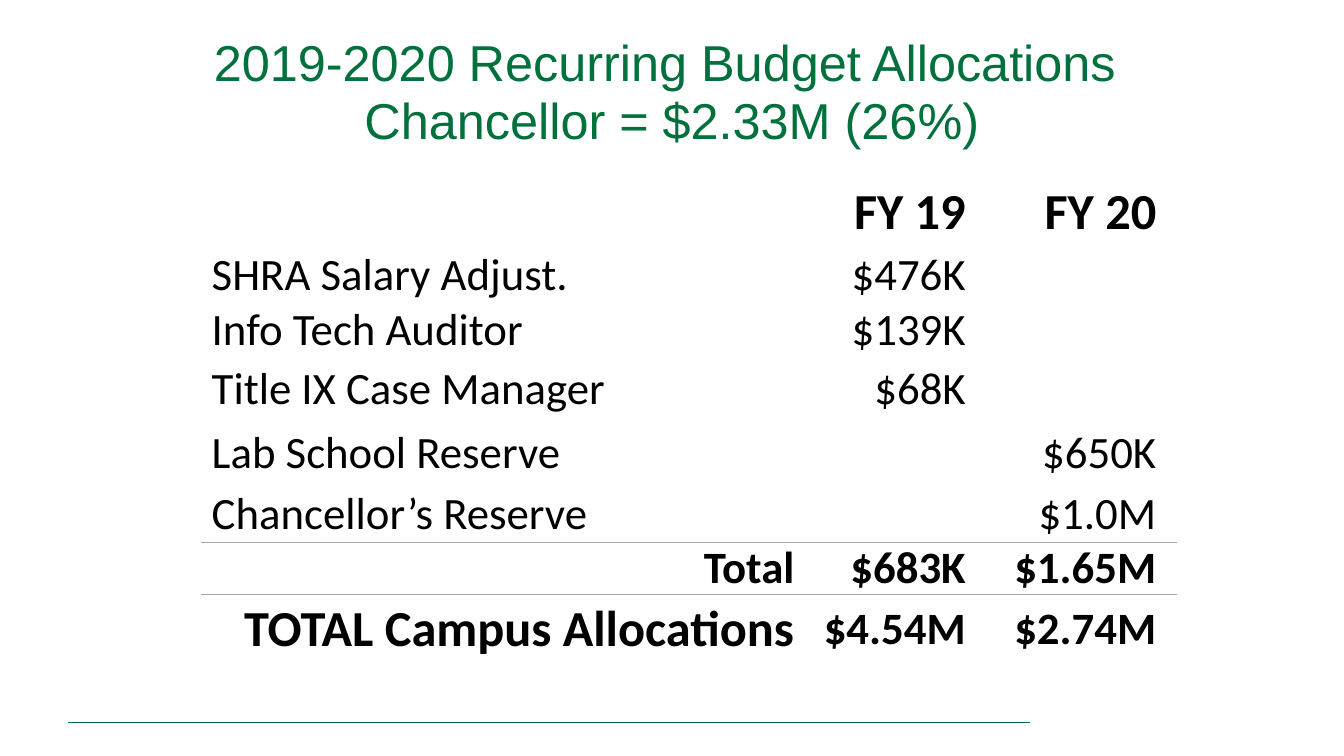
from dataclasses import dataclass

from lxml.etree import SubElement
from pptx import Presentation
from pptx.dml.color import RGBColor as RGB
from pptx.enum.shapes import MSO_CONNECTOR as CONN
from pptx.enum.text import MSO_ANCHOR as ANCHOR, MSO_AUTO_SIZE as AUTO, PP_ALIGN as ALIGN
from pptx.oxml.ns import qn
from pptx.util import Inches, Pt


@dataclass(frozen=True)
class Theme:
    green: str = "00703C"
    black: str = "000000"
    rule: str = "A6A6A6"
    head_font: str = "Arial"
    body_font: str = "Calibri"
    large: int = 36
    body: int = 32
    spacing: float = 0.95


THEME = Theme()

HEADER, TOTAL, CAMPUS = 0, 6, 7
ROWS = [
    ("", "FY 19", "FY 20"),
    ("SHRA Salary Adjust.", "$476K", ""),
    ("Info Tech Auditor", "$139K", ""),
    ("Title IX Case Manager", "$68K", ""),
    ("Lab School Reserve", "", "$650K"),
    ("Chancellor’s Reserve", "", "$1.0M"),
    ("Total", "$683K", "$1.65M"),
    ("TOTAL Campus Allocations", "$4.54M", "$2.74M"),
]
ROW_HEIGHTS = [0.71, 0.52, 0.54, 0.62, 0.65, 0.56, 0.51, 0.69]
COL_WIDTHS = [5.89, 1.89, 1.89]


def set_attrs(obj, values):
    for name, value in values.items():
        setattr(obj, name, value)


def format_paragraph(p, font, size, color, align, bold=False):
    set_attrs(p, {"alignment": align, "line_spacing": THEME.spacing})
    set_attrs(p.font, {"name": font, "size": Pt(size), "bold": bold})
    p.font.color.rgb = RGB.from_string(color)


def add_title(slide, box, text):
    title = slide.shapes.title
    set_attrs(title, dict(zip(("left", "top", "width", "height"), map(Inches, box))))
    tf = title.text_frame
    set_attrs(tf, {"word_wrap": True, "auto_size": AUTO.NONE,
                   "vertical_anchor": ANCHOR.MIDDLE})
    p = tf.paragraphs[0]
    p.text = text
    format_paragraph(p, THEME.head_font, THEME.large, THEME.green, ALIGN.CENTER)


def add_border(cell, side):
    ln = SubElement(cell._tc.get_or_add_tcPr(), qn(f"a:{side}"), w=str(Pt(0.25)))
    fill = SubElement(ln, qn("a:solidFill"))
    SubElement(fill, qn("a:srgbClr"), val=THEME.rule)


def format_cell(cell, row, col, text):
    is_label = col == 0
    is_summary = row in (HEADER, TOTAL, CAMPUS)
    is_large = row == HEADER or (row == CAMPUS and is_label)
    set_attrs(cell, {
        "vertical_anchor": ANCHOR.MIDDLE,
        "margin_left": Inches(0.1 if is_label else 0),
        "margin_right": Inches(0.01 if is_label else 0.2),
        "margin_top": 0,
        "margin_bottom": 0,
    })
    if row in (TOTAL, CAMPUS):
        add_border(cell, "lnT")
    if row in (TOTAL - 1, TOTAL):
        add_border(cell, "lnB")
    cell.fill.background()
    p = cell.text_frame.paragraphs[0]
    p.text = text
    format_paragraph(p, THEME.body_font, THEME.large if is_large else THEME.body,
                     THEME.black,
                     ALIGN.LEFT if is_label and not is_summary else ALIGN.RIGHT,
                     is_summary)


def add_budget_table(slide, box):
    frame = slide.shapes.add_table(len(ROWS), len(COL_WIDTHS), *map(Inches, box))
    table = frame.table
    set_attrs(table, {"first_row": False, "horz_banding": False})
    for column, width in zip(table.columns, COL_WIDTHS):
        column.width = Inches(width)
    for r, (values, height) in enumerate(zip(ROWS, ROW_HEIGHTS)):
        table.rows[r].height = Inches(height)
        for c, text in enumerate(values):
            format_cell(table.cell(r, c), r, c, text)


def add_footer_rule(slide, box):
    left, top, width, height = box
    line = slide.shapes.add_connector(
        CONN.STRAIGHT, *map(Inches, (left, top, left + width, top + height)))
    line.line.color.rgb = RGB.from_string(THEME.green)
    line.line.width = Pt(0.75)
    SubElement(line._element.spPr, qn("a:effectLst"))


def main():
    prs = Presentation()
    set_attrs(prs, {"slide_width": Inches(13.33), "slide_height": Inches(7.5)})
    slide = prs.slides.add_slide(prs.slide_layouts.get_by_name("Title Only"))
    add_footer_rule(slide, (0.67, 7.17, 9.55, 0))
    add_title(slide, (0, 0.3, 13.33, 1.25),
              "2019-2020 Recurring Budget Allocations \vChancellor = $2.33M (26%)")
    add_budget_table(slide, (2, 1.75, sum(COL_WIDTHS), sum(ROW_HEIGHTS)))
    prs.save("out.pptx")


if __name__ == "__main__":
    main()
